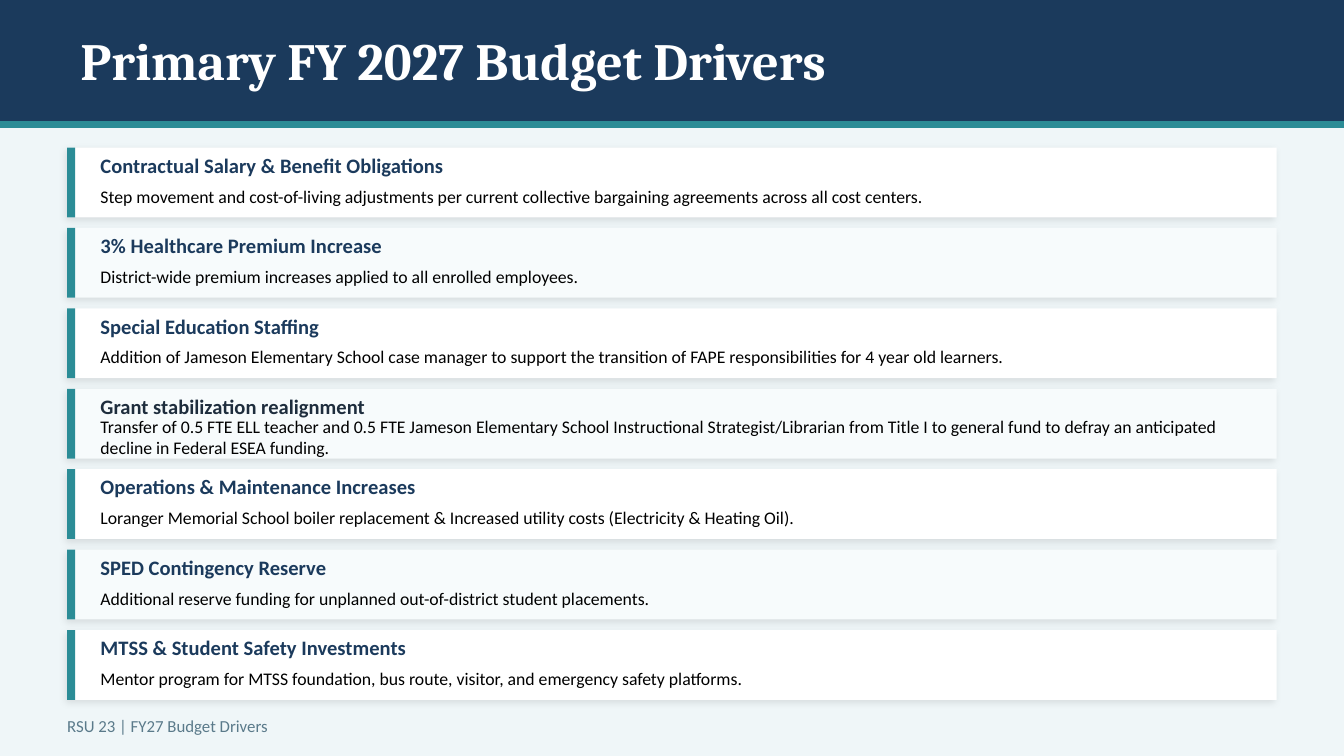
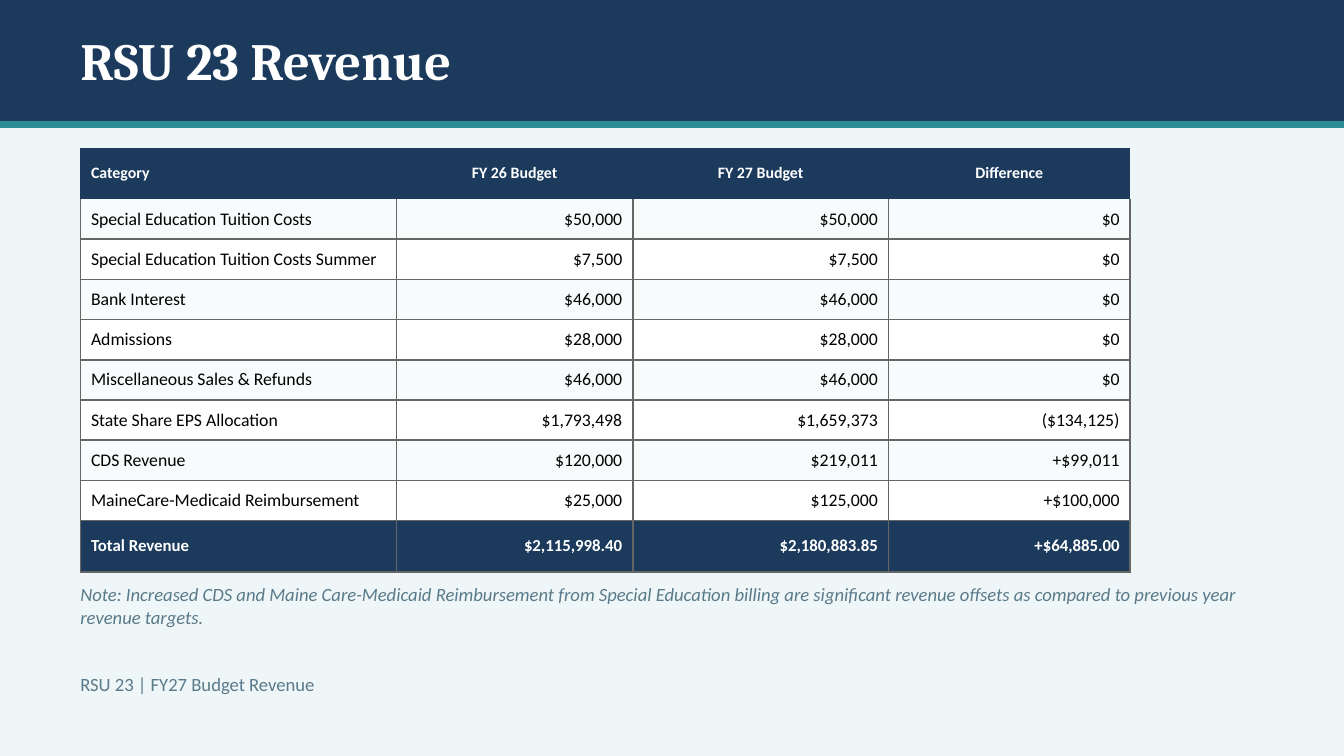
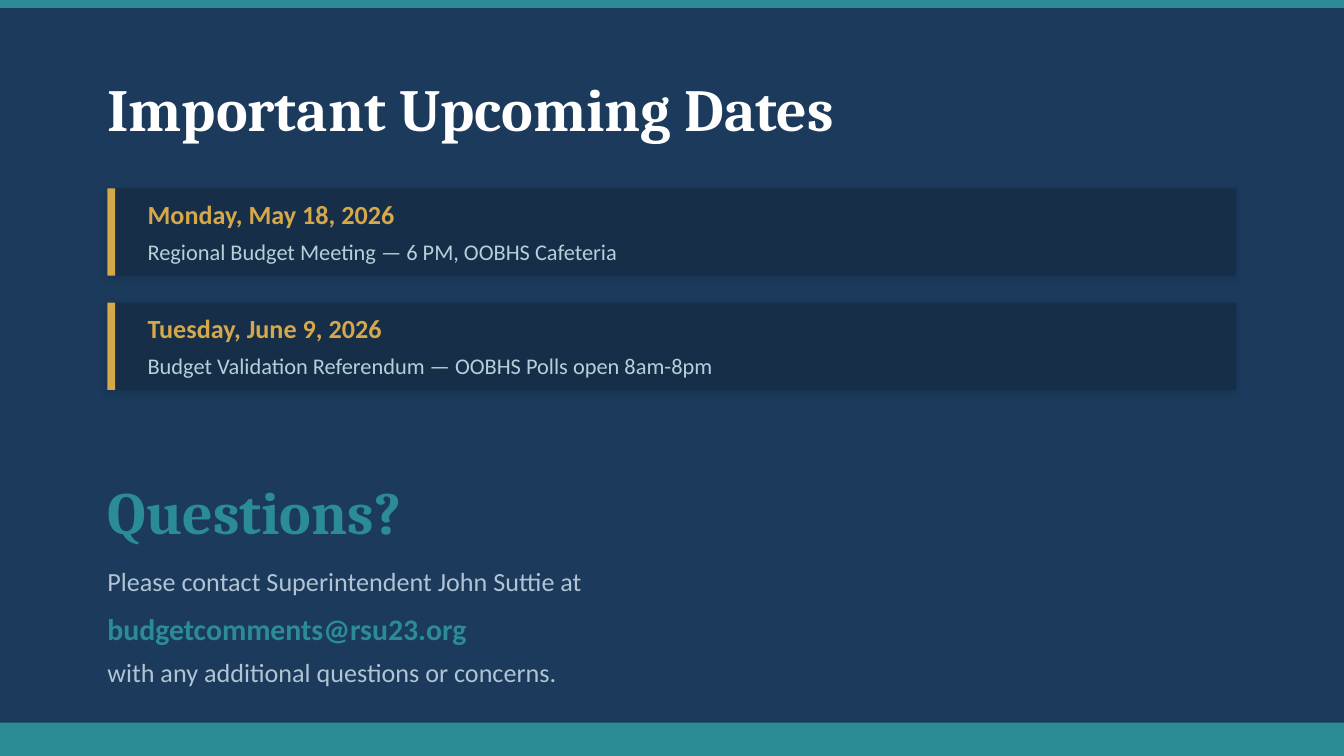
import lxml.etree
import pptx
import pptx.dml.color
import pptx.enum.shapes
import pptx.enum.text
import pptx.oxml.ns
import pptx.util

Cm = pptx.util.Cm
Pt = pptx.util.Pt
RGBColor = pptx.dml.color.RGBColor
ALIGN = pptx.enum.text.PP_ALIGN
MIDDLE = pptx.enum.text.MSO_ANCHOR.MIDDLE
qn = pptx.oxml.ns.qn

NAVY = RGBColor(0x1B, 0x3A, 0x5C)
DEEP_NAVY = RGBColor(0x16, 0x2E, 0x48)
INK = RGBColor(0x1E, 0x2D, 0x3D)
TEAL = RGBColor(0x2B, 0x8C, 0x96)
GOLD = RGBColor(0xD4, 0xA8, 0x4B)
MIST = RGBColor(0xEF, 0xF6, 0xF8)
FROST = RGBColor(0xF7, 0xFB, 0xFC)
SLATE = RGBColor(0x5A, 0x7A, 0x8A)
PALE_BLUE = RGBColor(0xB8, 0xCF, 0xD9)
SOFT_BLUE = RGBColor(0xB0, 0xC4, 0xD4)
GRID = RGBColor(0x66, 0x66, 0x66)
WHITE = RGBColor(0xFF, 0xFF, 0xFF)
BLACK = RGBColor(0, 0, 0)

HEADING_FONT = "Cambria"
BODY_FONT = "Calibri"
SLIDE_WIDTH, SLIDE_HEIGHT = 25.4, 14.29
STRIPE_WIDTH = 0.15

DRIVERS = [
    ("Contractual Salary & Benefit Obligations",
     "Step movement and cost-of-living adjustments per current collective bargaining "
     "agreements across all cost centers."),
    ("3% Healthcare Premium Increase",
     "District-wide premium increases applied to all enrolled employees."),
    ("Special Education Staffing",
     "Addition of Jameson Elementary School case manager to support the transition of "
     "FAPE responsibilities for 4 year old learners."),
    ("Grant stabilization realignment",
     "Transfer of 0.5 FTE ELL teacher and 0.5 FTE Jameson Elementary School Instructional "
     "Strategist/Librarian from Title I to general fund to defray an anticipated decline "
     "in Federal ESEA funding."),
    ("Operations & Maintenance Increases",
     "Loranger Memorial School boiler replacement & Increased utility costs "
     "(Electricity & Heating Oil)."),
    ("SPED Contingency Reserve",
     "Additional reserve funding for unplanned out-of-district student placements."),
    ("MTSS & Student Safety Investments",
     "Mentor program for MTSS foundation, bus route, visitor, and emergency safety platforms."),
]

REVENUE = [
    ("Category", "FY 26 Budget", "FY 27 Budget", "Difference"),
    ("Special Education Tuition Costs", "$50,000", "$50,000", "$0"),
    ("Special Education Tuition Costs Summer", "$7,500", "$7,500", "$0"),
    ("Bank Interest", "$46,000", "$46,000", "$0"),
    ("Admissions", "$28,000", "$28,000", "$0"),
    ("Miscellaneous Sales & Refunds", "$46,000", "$46,000", "$0"),
    ("State Share EPS Allocation", "$1,793,498", "$1,659,373", "($134,125)"),
    ("CDS Revenue", "$120,000", "$219,011", "+$99,011"),
    ("MaineCare-Medicaid Reimbursement", "$25,000", "$125,000", "+$100,000"),
    ("Total Revenue", "$2,115,998.40", "$2,180,883.85", "+$64,885.00"),
]

DATES = [
    ("Monday, May 18, 2026", "Regional Budget Meeting — 6 PM, OOBHS Cafeteria"),
    ("Tuesday, June 9, 2026", "Budget Validation Referendum — OOBHS Polls open 8am-8pm"),
]


def write(frame, text, *, size, color, font=BODY_FONT, bold=False, italic=False,
          align=ALIGN.LEFT, before=0):
    """Fill the frame's empty first paragraph, or add a paragraph after its text."""
    paragraph = frame.add_paragraph() if frame.text else frame.paragraphs[0]
    paragraph.alignment = align
    if before:
        paragraph.space_before = Pt(before)
    run = paragraph.add_run()
    run.text = text
    run.font.name = font
    run.font.size = Pt(size)
    run.font.bold = bold
    run.font.italic = italic
    run.font.color.rgb = color


def set_border(cell, side, color):
    """Draw one cell edge (L, R, T or B); a color of None hides it."""
    edge = lxml.etree.SubElement(cell._tc.get_or_add_tcPr(), qn(f"a:ln{side}"),
                                 w=str(Pt(1) if color else 0))
    if color is None:
        lxml.etree.SubElement(edge, qn("a:noFill"))
    else:
        fill = lxml.etree.SubElement(edge, qn("a:solidFill"))
        lxml.etree.SubElement(fill, qn("a:srgbClr"), val=str(color))


class Deck:
    """Holds the presentation, its style and the slide being built; lengths are in cm."""

    def __init__(self):
        self.presentation = pptx.Presentation()
        self.presentation.slide_width = Cm(SLIDE_WIDTH)
        self.presentation.slide_height = Cm(SLIDE_HEIGHT)
        self.slide = None

    def new_slide(self, background):
        self.slide = self.presentation.slides.add_slide(self.presentation.slide_layouts[6])
        self.slide.background.fill.solid()
        self.slide.background.fill.fore_color.rgb = background

    def block(self, left, top, width, height, color, shadow=False):
        rectangle = self.slide.shapes.add_shape(
            pptx.enum.shapes.MSO_SHAPE.RECTANGLE, Cm(left), Cm(top), Cm(width), Cm(height))
        rectangle.fill.solid()
        rectangle.fill.fore_color.rgb = color
        rectangle.line.fill.background()
        rectangle.shadow.inherit = False
        if shadow:
            effects = rectangle._element.spPr.find(qn("a:effectLst"))
            outer = lxml.etree.SubElement(
                effects, qn("a:outerShdw"), blurRad=str(Pt(4)), dist=str(Pt(2)),
                dir=str(135 * 60000), algn="bl", rotWithShape="0")
            shade = lxml.etree.SubElement(outer, qn("a:srgbClr"), val=str(BLACK))
            lxml.etree.SubElement(shade, qn("a:alpha"), val="10000")

    def text(self, left, top, width, height, text, **style):
        frame = self.slide.shapes.add_textbox(
            Cm(left), Cm(top), Cm(width), Cm(height)).text_frame
        frame.word_wrap = True
        frame.vertical_anchor = MIDDLE
        frame.margin_left = frame.margin_right = frame.margin_top = frame.margin_bottom = 0
        write(frame, text, **style)
        return frame

    def header(self, title):
        self.block(0, 0, SLIDE_WIDTH, 2.29, NAVY)
        self.text(1.52, 0.3, 22.86, 1.65, title,
                  size=28, color=WHITE, font=HEADING_FONT, bold=True)
        self.block(0, 2.29, SLIDE_WIDTH, 0.13, TEAL)

    def card(self, left, top, width, height, fill, stripe):
        self.block(left, top, width, height, fill, shadow=True)
        self.block(left, top, STRIPE_WIDTH, height, stripe)

    def table(self, left, top, column_widths, row_heights, rows):
        """Add a table with a dark first and last row and alternating rows between."""
        table = self.slide.shapes.add_table(
            len(rows), len(column_widths), Cm(left), Cm(top),
            Cm(sum(column_widths)), Cm(sum(row_heights))).table
        for column, width in zip(table.columns, column_widths):
            column.width = Cm(width)
        for r, (values, height) in enumerate(zip(rows, row_heights)):
            table.rows[r].height = Cm(height)
            is_header, is_total = r == 0, r == len(rows) - 1
            if is_header or is_total:
                fill = NAVY
                style = dict(size=8.5 if is_header else 9, color=WHITE, bold=True)
            else:
                fill = FROST if r % 2 else WHITE
                style = dict(size=9.5, color=BLACK)
            value_align = ALIGN.CENTER if is_header else ALIGN.RIGHT
            for c, value in enumerate(values):
                cell = table.cell(r, c)
                for side in "LRTB":
                    hidden = is_header or (r == 1 and side == "T")
                    set_border(cell, side, None if hidden else GRID)
                cell.fill.solid()
                cell.fill.fore_color.rgb = fill
                cell.vertical_anchor = MIDDLE
                cell.margin_left = cell.margin_right = Cm(0.2)
                cell.margin_top = cell.margin_bottom = Cm(0.1)
                write(cell.text_frame, value, align=value_align if c else ALIGN.LEFT, **style)


def build_drivers(deck):
    deck.new_slide(MIST)
    deck.header("Primary FY 2027 Budget Drivers")
    first_top, pitch = 2.79, 1.52
    for i, (driver, detail) in enumerate(DRIVERS):
        top = first_top + i * pitch
        deck.card(1.27, top, 22.86, 1.32, FROST if i % 2 else WHITE, TEAL)
        deck.text(1.9, top + 0.05, 21.59, 0.56, driver, size=11, bold=True,
                  color=INK if driver.startswith("Grant") else NAVY)
        deck.text(1.9, top + 0.61, 21.59, 0.61, detail, size=9.5, color=BLACK)
    deck.text(1.27, 13.34, 22.86, 0.76, "RSU 23 | FY27 Budget Drivers", size=9, color=SLATE)


def build_revenue(deck):
    deck.new_slide(MIST)
    deck.header("RSU 23 Revenue")
    deck.table(1.52, 2.79, [5.97, 4.47, 4.83, 4.57], [0.97] + [0.76] * 8 + [0.97], REVENUE)
    note = deck.text(
        1.52, 11.57, 22.35, 1.02,
        "Note: Increased CDS and Maine Care-Medicaid Reimbursement from Special Education "
        "billing are significant revenue offsets as compared to previous year revenue targets.",
        size=10, color=SLATE, italic=True)
    write(note, "RSU 23 | FY27 Budget Revenue", size=10, color=SLATE, before=24)


def build_dates(deck):
    left, width = 2.03, 21.34
    deck.new_slide(NAVY)
    deck.block(0, 0, SLIDE_WIDTH, 0.15, TEAL)
    section = dict(size=32, font=HEADING_FONT, bold=True)
    deck.text(left, 1.27, width, 1.52, "Important Upcoming Dates", color=WHITE, **section)
    for i, (date, event) in enumerate(DATES):
        top = 3.56 + i * 2.16
        deck.card(left, top, width, 1.65, DEEP_NAVY, GOLD)
        deck.text(2.79, top + 0.13, 20.07, 0.71, date, size=14, color=GOLD, bold=True)
        deck.text(2.79, top + 0.84, 20.07, 0.71, event, size=12, color=PALE_BLUE)
    deck.text(left, 8.89, width, 1.52, "Questions?", color=TEAL, **section)
    deck.text(left, 10.54, width, 0.89, "Please contact Superintendent John Suttie at",
              size=14, color=SOFT_BLUE)
    deck.text(left, 11.43, width, 0.89, "budgetcomments@rsu23.org",
              size=16, color=TEAL, bold=True)
    deck.text(left, 12.32, width, 0.76, "with any additional questions or concerns.",
              size=14, color=SOFT_BLUE)
    deck.block(0, 13.66, SLIDE_WIDTH, 0.63, TEAL)


def main():
    deck = Deck()
    build_drivers(deck)
    build_revenue(deck)
    build_dates(deck)
    deck.presentation.save("out.pptx")


if __name__ == "__main__":
    main()
